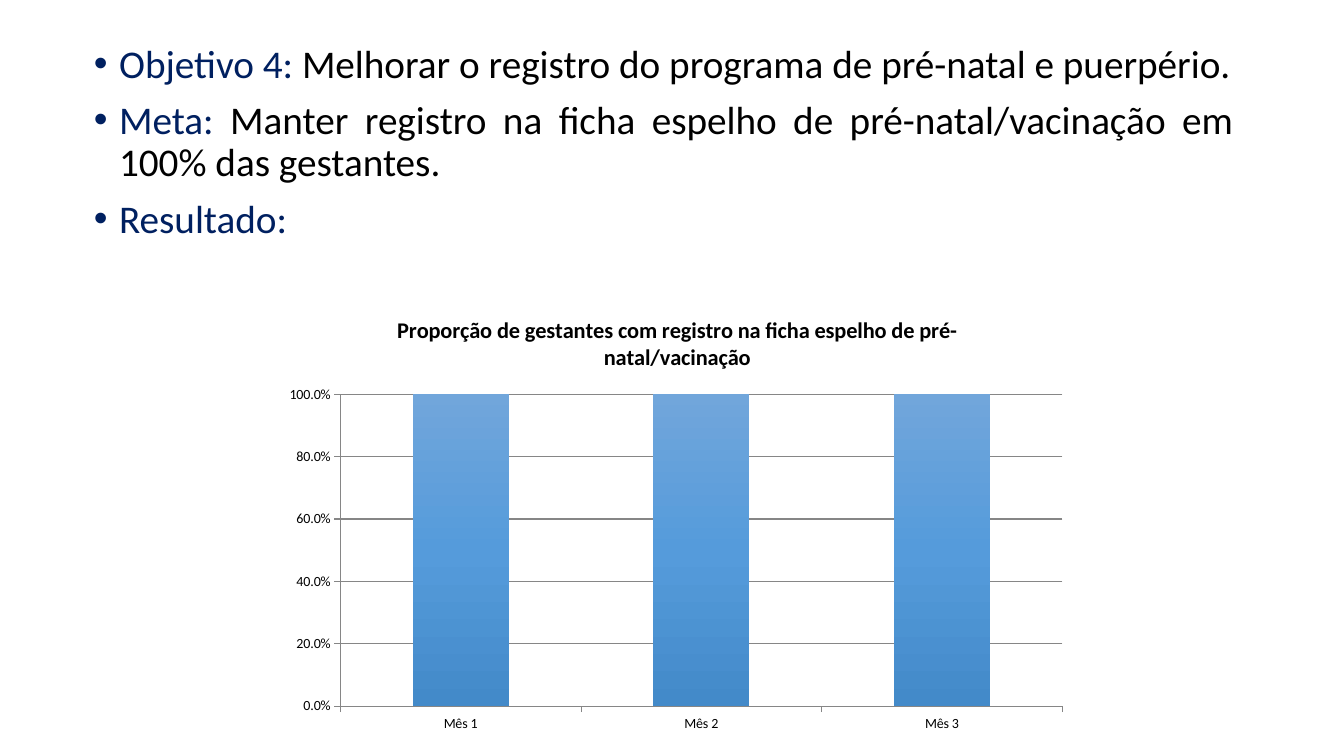
"""Build a slide with a goal, a target and a column chart of the result."""
import copy

import lxml.etree
import pptx
import pptx.chart.data
import pptx.dml.color
import pptx.enum.chart
import pptx.enum.text
import pptx.oxml.ns
import pptx.util

Pt = pptx.util.Pt
RGBColor = pptx.dml.color.RGBColor
qn = pptx.oxml.ns.qn

NAVY = RGBColor(0x00, 0x20, 0x60)
BLACK = RGBColor(0x00, 0x00, 0x00)
GRAY = RGBColor(0x86, 0x86, 0x86)
BAR_COLORS = [
    RGBColor(0x71, 0xA6, 0xDB),
    RGBColor(0x55, 0x9B, 0xDB),
    RGBColor(0x43, 0x8A, 0xC9),
]
FONT = "Calibri"
CHART_TITLE = "Proporção de gestantes com registro na ficha espelho de pré-natal/vacinação"
BULLETS = [
    [("Objetivo 4: ", NAVY),
     ("Melhorar o registro do programa de pré-natal e puerpério.", BLACK)],
    [("Meta: ", NAVY),
     ("Manter registro na ficha espelho de pré-natal/vacinação em 100% das gestantes.", BLACK)],
    [("Resultado: ", NAVY)],
]


def style_font(font, size, color, bold=False):
    font.name = FONT
    font.size = Pt(size)
    font.bold = bold
    font.color.rgb = color


prs = pptx.Presentation()
prs.slide_width = Pt(960)
prs.slide_height = Pt(540)
s = prs.slides.add_slide(prs.slide_layouts[6])

tf = s.shapes.add_textbox(Pt(60), Pt(28), Pt(828), Pt(183.5)).text_frame
tf.word_wrap = True
for i, runs in enumerate(BULLETS):
    p = tf.add_paragraph() if i else tf.paragraphs[0]
    p.alignment = pptx.enum.text.PP_ALIGN.JUSTIFY
    p.line_spacing = 0.9
    p.space_before = Pt(10)
    pPr = p._p.get_or_add_pPr()
    pPr.set("marL", str(Pt(18)))
    pPr.set("indent", str(-Pt(18)))
    lxml.etree.SubElement(pPr, qn("a:buFont")).set("typeface", "Arial")
    lxml.etree.SubElement(pPr, qn("a:buChar")).set("char", "•")
    for text, color in runs:
        r = p.add_run()
        r.text = text
        style_font(r.font, 28, color)

data = pptx.chart.data.CategoryChartData(number_format="0.0%")
data.categories = ["Mês 1", "Mês 2", "Mês 3"]
data.add_series(CHART_TITLE, [1, 1, 1])
chart = s.shapes.add_chart(
    pptx.enum.chart.XL_CHART_TYPE.COLUMN_CLUSTERED,
    Pt(197.3), Pt(211.7), Pt(573), Pt(318.2), data).chart
style_font(chart.font, 10, BLACK)
chart.has_legend = False
chart.has_title = True
r = chart.chart_title.text_frame.paragraphs[0].add_run()
r.text = CHART_TITLE
style_font(r.font, 16, BLACK, bold=True)
chart.chart_title.include_in_layout = False

plot = chart.plots[0]
plot.gap_width = 150
plot.vary_by_categories = False
ser = plot.series[0]
fill = ser.format.fill
fill.gradient()
fill.gradient_angle = 270
stops = ser._element.find(".//" + qn("a:gsLst"))
stops.insert(1, copy.deepcopy(stops[0]))
for i, (stop, color) in enumerate(zip(fill.gradient_stops, BAR_COLORS)):
    stop.position = i / 2
    stop.color.rgb = color

val = chart.value_axis
val.minimum_scale = 0
val.maximum_scale = 1
val.major_unit = 0.2
val.has_major_gridlines = True
val.major_gridlines.format.line.color.rgb = GRAY
val.major_gridlines.format.line.width = Pt(0.75)
val.tick_labels.number_format = "0.0%"
val.tick_labels.number_format_is_linked = False
for axis in (chart.category_axis, val):
    axis.major_tick_mark = pptx.enum.chart.XL_TICK_MARK.OUTSIDE
    axis.minor_tick_mark = pptx.enum.chart.XL_TICK_MARK.NONE
    axis.format.line.color.rgb = GRAY
    axis.format.line.width = Pt(0.75)

area = chart._chartSpace.find(".//" + qn("c:plotArea"))
layout = area.find(qn("c:layout"))
if layout is None:
    layout = lxml.etree.Element(qn("c:layout"))
    area.insert(0, layout)
manual = lxml.etree.SubElement(layout, qn("c:manualLayout"))
for tag, value in [("layoutTarget", "inner"), ("xMode", "edge"), ("yMode", "edge"),
                   ("x", "0.08"), ("y", "0.22"), ("w", "0.9"), ("h", "0.7")]:
    lxml.etree.SubElement(manual, qn("c:" + tag)).set("val", value)

prs.save("out.pptx")
